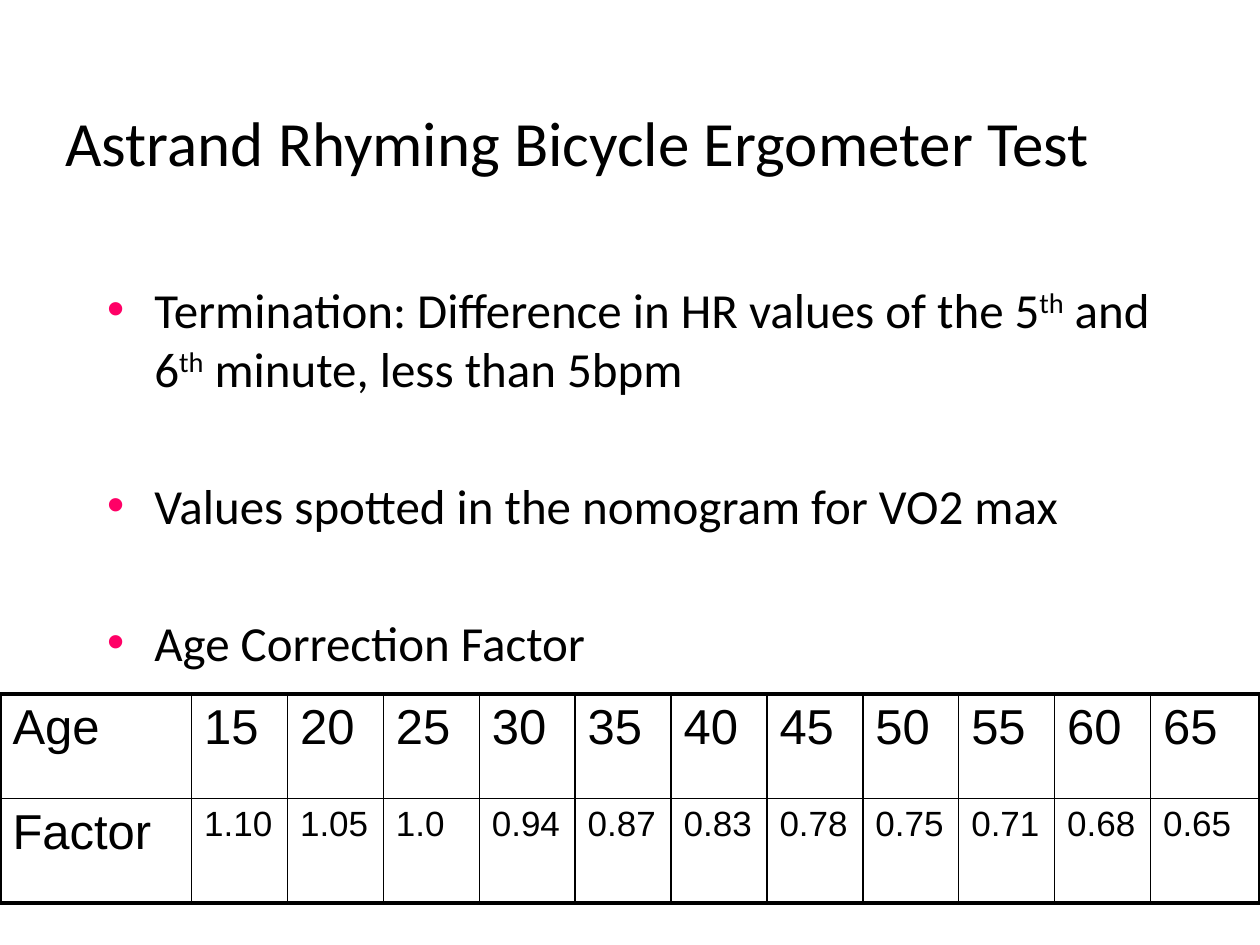
from lxml.etree import SubElement
from pptx import Presentation
from pptx.dml.color import RGBColor
from pptx.enum.text import MSO_ANCHOR, MSO_AUTO_SIZE, PP_ALIGN
from pptx.oxml.ns import qn
from pptx.util import Pt

INK = "000000"
PINK = "FF0066"
AGES = ["Age", "15", "20", "25", "30", "35", "40", "45", "50", "55", "60", "65"]
RATES = ["Factor", "1.10", "1.05", "1.0", "0.94", "0.87", "0.83", "0.78",
         "0.75", "0.71", "0.68", "0.65"]
ITEMS = [
    [("Termination: Difference in HR values of the 5", False), ("th", True),
     (" and 6", False), ("th", True), (" minute, less than 5bpm", False)],
    [("Values spotted in the nomogram for VO2 max", False)],
    [("Age Correction Factor", False)],
]


def color(code):
    return RGBColor.from_string(code)


def apply(target, values):
    for name, value in values.items():
        setattr(target, name, value)


class Deck:
    def __init__(self, slide):
        self.slide = slide
        self.head = {"name": "Calibri", "size": Pt(36)}
        self.text = {"name": "Calibri", "size": Pt(28)}
        self.cell = {"name": "Arial", "size": Pt(28)}
        self.small = {"name": "Arial", "size": Pt(20)}

    def place(self, shape, left, top, width, height):
        apply(shape, {"left": Pt(left), "top": Pt(top),
                      "width": Pt(width), "height": Pt(height)})
        apply(shape.text_frame, {"word_wrap": True, "auto_size": MSO_AUTO_SIZE.NONE})
        return shape.text_frame

    def label(self, para, words, style, raised=False):
        run = para.add_run()
        run.text = words
        apply(run.font, style)
        run.font.color.rgb = color(INK)
        if raised:
            run.font._element.set("baseline", "30000")

    def title(self, words, *box):
        frame = self.place(self.slide.shapes.title, *box)
        frame.vertical_anchor = MSO_ANCHOR.MIDDLE
        para = frame.paragraphs[0]
        para.alignment = PP_ALIGN.CENTER
        self.label(para, words, self.head)

    def bullet(self, para):
        props = para._p.get_or_add_pPr()
        props.set("marL", str(Pt(27)))
        props.set("indent", str(Pt(-27)))
        SubElement(SubElement(props, qn("a:buClr")), qn("a:srgbClr"), val=PINK)
        SubElement(props, qn("a:buFont"), typeface="Arial")
        SubElement(props, qn("a:buChar"), char="•")

    def body(self, items, *box):
        frame = self.place(self.slide.placeholders[1], *box)
        for index, item in enumerate(items):
            para = frame.add_paragraph() if index else frame.paragraphs[0]
            if index:
                para.space_before = Pt(44.7)
            self.bullet(para)
            for words, raised in item:
                self.label(para, words, self.text, raised)

    def border(self, cell, sides):
        props = cell._tc.get_or_add_tcPr()
        for side, outer in sides.items():
            line = SubElement(props, qn("a:ln" + side), w=str(Pt(2.25 if outer else 1)))
            fill = SubElement(line, qn("a:solidFill"))
            SubElement(fill, qn("a:srgbClr"), val=INK)

    def table(self, rows, widths, left, top, height):
        count = len(widths)
        table = self.slide.shapes.add_table(
            len(rows), count, Pt(left), Pt(top), Pt(sum(widths)), Pt(height)).table
        apply(table, {"first_row": False, "horz_banding": False})
        for col, width in zip(table.columns, widths):
            col.width = Pt(width)
        for y, row in enumerate(rows):
            for x, words in enumerate(row):
                cell = table.cell(y, x)
                style = self.small if x and y else self.cell
                self.label(cell.text_frame.paragraphs[0], words, style)
                self.border(cell, {"L": x == 0, "R": x == count - 1,
                                   "T": y == 0, "B": y == len(rows) - 1})
                cell.fill.background()


def main():
    show = Presentation()
    apply(show, {"slide_width": Pt(720), "slide_height": Pt(540)})
    deck = Deck(show.slides.add_slide(show.slide_layouts[1]))
    deck.title("Astrand Rhyming Bicycle Ergometer Test", 24, 36, 612, 90)
    deck.body(ITEMS, 54, 156, 636, 324)
    widths = [109.5] + [54.8] * 10 + [62.5]
    deck.table([AGES, RATES], widths, 0, 396.6, 119.5)
    show.save("out.pptx")


if __name__ == "__main__":
    main()
